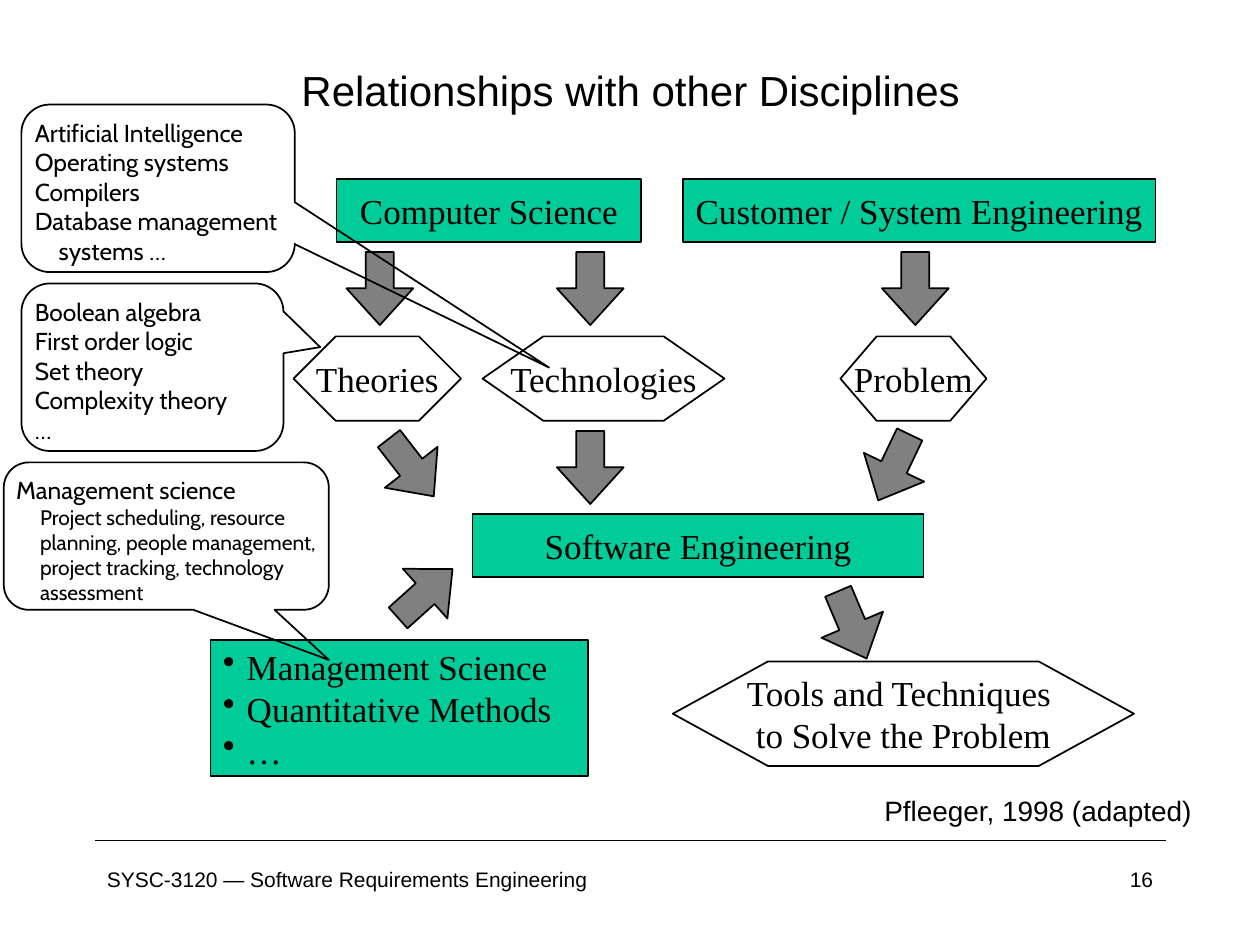
from pptx import Presentation
from pptx.util import Inches, Pt
from pptx.dml.color import RGBColor
from pptx.enum.shapes import MSO_SHAPE as SHAPE, MSO_CONNECTOR
from pptx.enum.text import PP_ALIGN as ALIGN, MSO_ANCHOR as ANCHOR
from lxml.etree import SubElement
from pptx.oxml.ns import qn

BLACK, GREEN, GRAY = "000000", "00CC99", "808080"
SERIF, SANS, NOTE = "Times New Roman", "Arial", "Cabin"
INDENT = 0.19

# Content: text, left, top, width, height
DISCIPLINES = [
    ("Computer Science", 2.67, 1.42, 2.42, 0.5),
    ("Customer / System Engineering", 5.42, 1.42, 3.75, 0.5),
    ("Software Engineering", 3.75, 4.08, 3.58, 0.5),
]
MANAGEMENT = ["Management Science", "Quantitative Methods", "…"]
# Hexagons add the depth of their points
TOPICS = [
    ("Theories", 2.33, 2.67, 1.33, 0.67, 0.5),
    ("Technologies", 3.83, 2.67, 1.92, 0.67, 0.72),
    ("Problem", 6.67, 2.67, 1.16, 0.67, 0.43),
    ("Tools and Techniques \vto Solve the Problem", 5.34, 5.25, 3.66, 0.83, 0.91),
]
# Arrows: left, top, rotation
ARROWS = [
    (2.75, 2, 0), (4.42, 2, 0), (7, 2, 0),
    (6.5, 4.67, 337), (6.83, 3.42, 25.5), (4.42, 3.42, 0),
    (3, 3.42, 322.2), (3.11, 4.42, 228.1),
]
# Callouts: box, pointer offset from centre, lines
MANAGEMENT_NOTE = ((0.03, 3.67, 2.58, 1.17), (0.5, 0.84), [
    "Management science",
    "Project scheduling, resource planning, people management, "
    "project tracking, technology assessment"])
EXAMPLE_NOTES = [
    ((0.17, 0.83, 2.17, 1.33), (1.43, 1.07), [
        "Artificial Intelligence", "Operating systems", "Compilers",
        "Database management systems …"]),
    ((0.17, 2.25, 2.08, 1.33), (0.64, -0.12), [
        "Boolean algebra", "First order logic", "Set theory",
        "Complexity theory", "…"]),
]
# Plain text: text, box, size, alignment, anchor, wrap
LABELS = [
    ("SYSC-3120 — Software Requirements Engineering",
     (0.75, 6.83, 4.92, 0.5), 12, ALIGN.LEFT, ANCHOR.TOP, True),
    ("16", (7.17, 6.83, 2.08, 0.5), 12, ALIGN.RIGHT, ANCHOR.TOP, True),
    ("Relationships with other Disciplines",
     (0.42, 0.42, 9.17, 0.58), 24, ALIGN.CENTER, ANCHOR.MIDDLE, True),
    ("Pfleeger, 1998 (adapted)",
     (6.92, 6.25, 2.67, 0.37), 16, ALIGN.LEFT, ANCHOR.TOP, False),
]

prs = Presentation()
prs.slide_width, prs.slide_height = Inches(10), Inches(7.5)
slide = prs.slides.add_slide(prs.slide_layouts[6])


def color(value):
    return RGBColor.from_string(value)


def add_shape(kind, box, fill=None, adjust=()):
    sp = slide.shapes.add_shape(kind, *map(Inches, box))
    sp.shadow.inherit = False
    if fill:
        sp.fill.solid()
        sp.fill.fore_color.rgb = color(fill)
    else:
        sp.fill.background()
    sp.line.color.rgb = color(BLACK)
    sp.line.width = Pt(1)
    for i, value in enumerate(adjust):
        sp.adjustments[i] = value
    return sp


def write(sp, lines, font, size, align=ALIGN.LEFT, anchor=ANCHOR.TOP, wrap=True):
    tf = sp.text_frame
    tf.text = "\n".join(lines)
    tf.word_wrap = wrap
    tf.vertical_anchor = anchor
    for p in tf.paragraphs:
        p.alignment = align
        for r in p.runs:
            r.font.name, r.font.size = font, Pt(size)
            r.font.color.rgb = color(BLACK)
    return tf


def indent(p, first=-INDENT, bullet=None):
    pPr = p._p.get_or_add_pPr()
    pPr.set("marL", str(Inches(INDENT)))
    pPr.set("indent", str(Inches(first)))
    if bullet:
        SubElement(pPr, qn("a:buChar")).set("char", bullet)


def add_callout(box, pointer, lines):
    sp = add_shape(SHAPE.ROUNDED_RECTANGULAR_CALLOUT, box, adjust=(*pointer, 0.17))
    tf = write(sp, lines, NOTE, 14)
    tf.margin_left = tf.margin_right = Inches(0.04)
    tf.margin_top = tf.margin_bottom = Inches(0.04)
    return tf.paragraphs


# Footer rule
rule = slide.shapes.add_connector(
    MSO_CONNECTOR.STRAIGHT, *map(Inches, (0.75, 6.67, 9.25, 6.67)))
rule.line.color.rgb = color(BLACK)
rule.line.width = Pt(1)
SubElement(rule._element.spPr, qn("a:effectLst"))

# Title, footer and citation
for text, box, size, align, anchor, wrap in LABELS:
    write(slide.shapes.add_textbox(*map(Inches, box)),
          [text], SANS, size, align, anchor, wrap)

# Topics and disciplines
for text, *box, depth in TOPICS:
    sp = add_shape(SHAPE.HEXAGON, box, adjust=(depth,))
    write(sp, [text], SERIF, 20, ALIGN.CENTER, ANCHOR.MIDDLE, False)
for text, *box in DISCIPLINES:
    sp = add_shape(SHAPE.RECTANGLE, box, GREEN)
    write(sp, [text], SERIF, 20, ALIGN.CENTER, ANCHOR.MIDDLE, False)

# Management disciplines
sp = add_shape(SHAPE.RECTANGLE, (1.67, 5.08, 3, 1.08), GREEN)
for p in write(sp, MANAGEMENT, SERIF, 20, anchor=ANCHOR.MIDDLE).paragraphs:
    indent(p, bullet="•")

# Arrows
for left, top, rotation in ARROWS:
    sp = add_shape(SHAPE.DOWN_ARROW, (left, top, 0.53, 0.58), GRAY, (0.42, 0.55))
    sp.rotation = rotation

# Callouts
heading, detail = add_callout(*MANAGEMENT_NOTE)
detail.level = 1
indent(detail, first=0)
detail.runs[0].font.size = Pt(12)
for note in EXAMPLE_NOTES:
    for p in add_callout(*note):
        indent(p)

prs.save("out.pptx")
